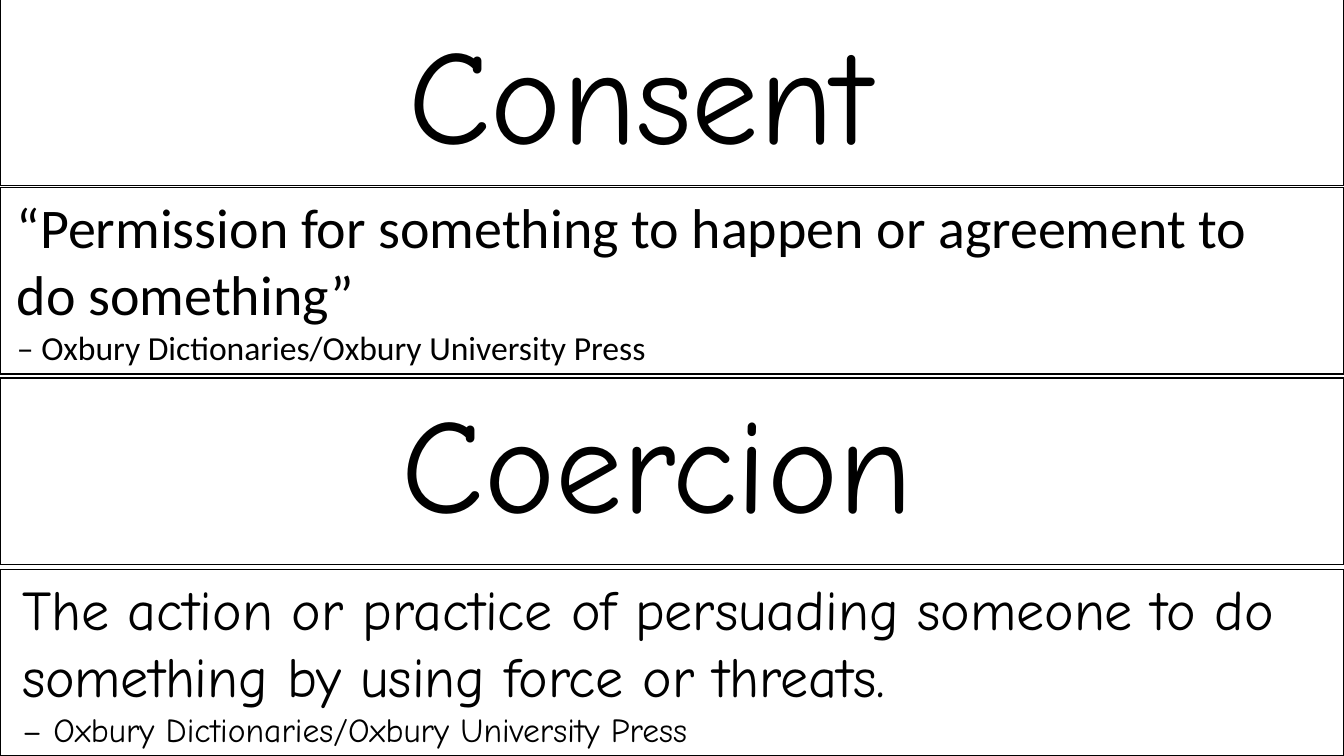
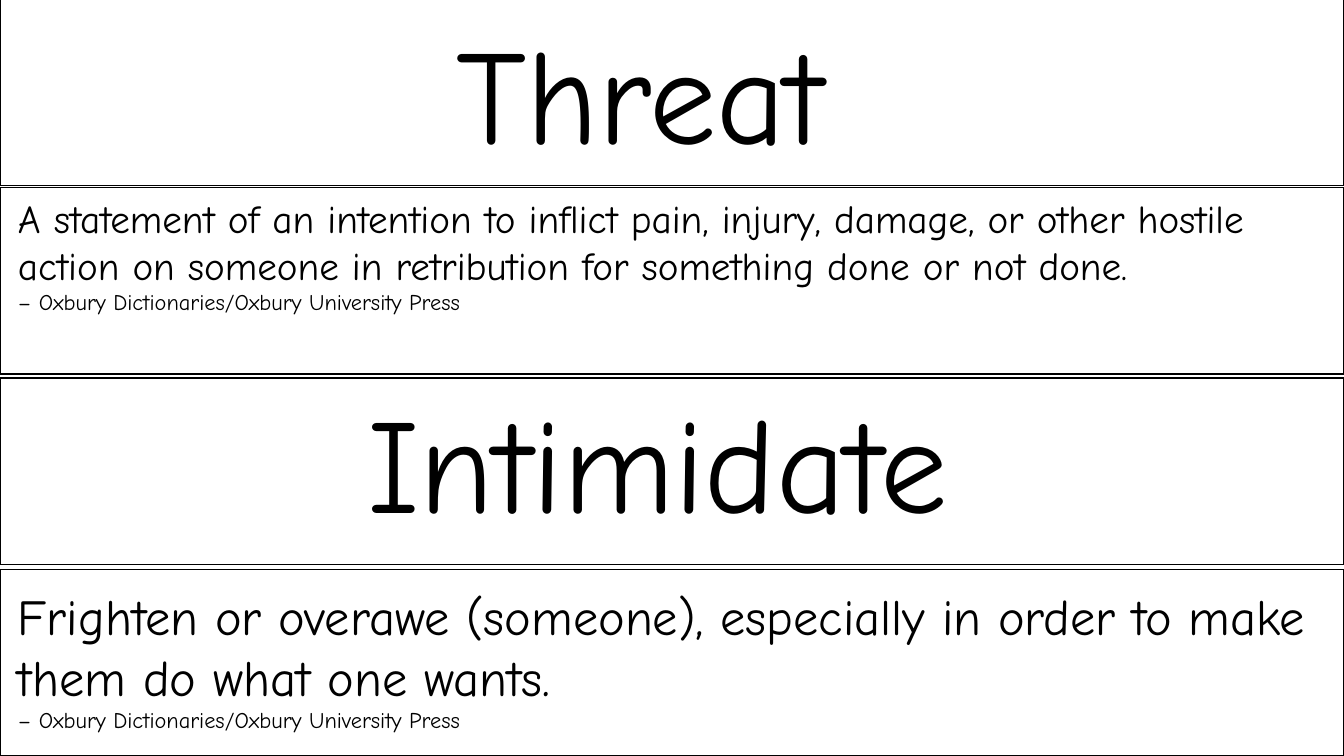
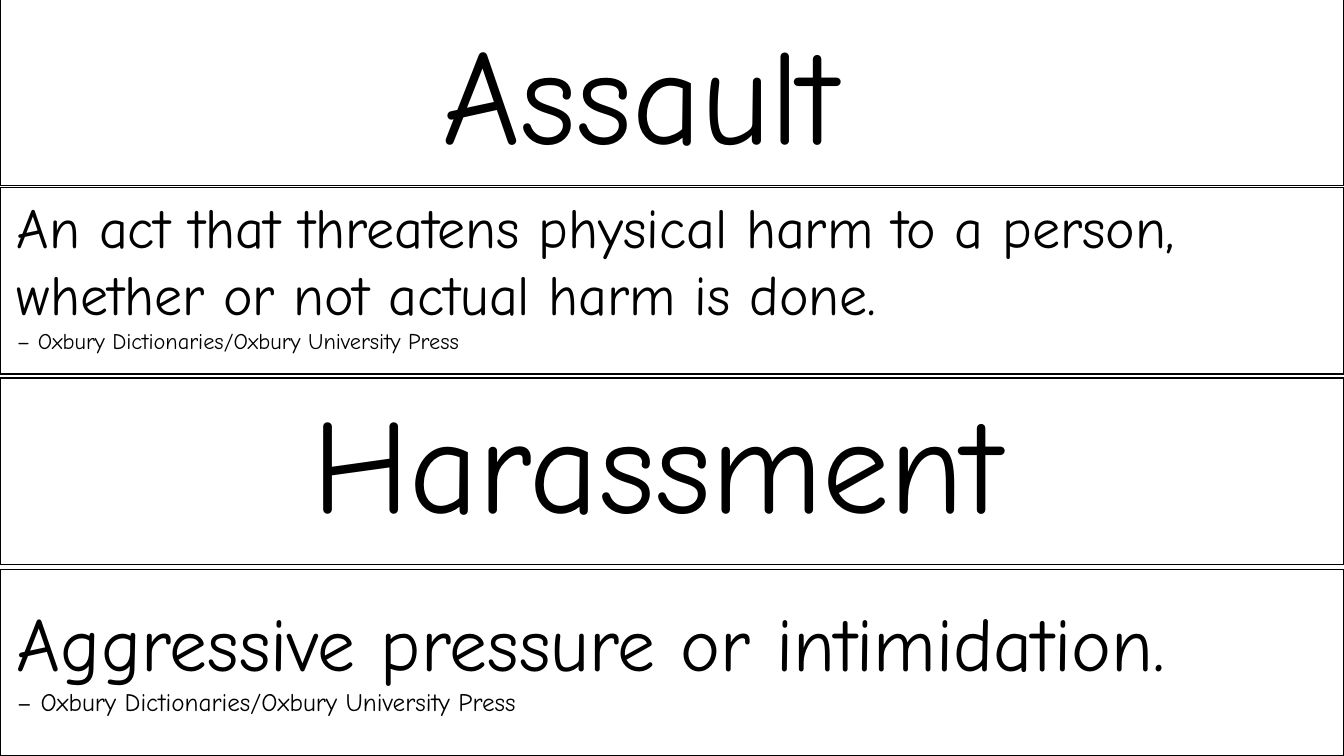
from pptx import Presentation
from pptx.dml.color import RGBColor
from pptx.enum.shapes import MSO_SHAPE
from pptx.enum.text import MSO_AUTO_SIZE, PP_ALIGN
from pptx.util import Pt

RECT = MSO_SHAPE.RECTANGLE
GROW = MSO_AUTO_SIZE.SHAPE_TO_FIT_TEXT
LEFT, CENTER = PP_ALIGN.LEFT, PP_ALIGN.CENTER

PX = 9144  # 100 px to the inch
WIDE, HIGH = 1333, 750
BLACK, WHITE = "000000", "FFFFFF"
HAND, PLAIN = "Comic Neue", "Calibri"

BANDS = [-1, 186, 375, 565]
BAND_H = 185
TITLES = [(0, 5), (17, 371)]
TITLE_W, TITLE_H, TITLE_SIZE = 1270, 172, 96
CREDIT = "– Oxbury Dictionaries/Oxbury University Press"

# Two terms a slide: term, meaning, (left, top, width), sizes, font
SLIDES = [
    [("Consent",
      "“Permission for something to happen or agreement to do something”",
      (7, 186, 1270), (40, 24), PLAIN),
     ("Coercion",
      "The action or practice of persuading someone to do something "
      "by using force or threats.",
      (12, 565, 1308), (40, 24), HAND)],
    [("Threat",
      "A statement of an intention to inflict pain, injury, damage, or other "
      "hostile action on someone in retribution for something done or not done.",
      (8, 188, 1325), (28, 16), HAND),
     ("Intimidate",
      "Frighten or overawe (someone), especially in order to make them "
      "do what one wants.",
      (8, 576, 1310), (36, 16), HAND)],
    [("Assault",
      "An act that threatens physical harm to a person, whether or not "
      "actual harm is done.",
      (7, 186, 1326), (40, 16), HAND),
     ("Harassment",
      "Aggressive pressure or intimidation.",
      (7, 586, 1308), (54, 18), HAND)],
]


def rgb(code):
    return RGBColor.from_string(code)


def area(*box):
    return [n * PX for n in box]


def band(slide, top):
    shape = slide.shapes.add_shape(RECT, *area(0, top, WIDE, BAND_H))
    shape.shadow.inherit = False
    shape.fill.solid()
    shape.fill.fore_color.rgb = rgb(WHITE)
    shape.line.color.rgb = rgb(BLACK)
    shape.line.width = Pt(1)


def text(slide, box, lines, sizes, font=HAND, align=LEFT):
    """Add a text box with one paragraph for each line and its size."""
    frame = slide.shapes.add_textbox(*area(*box)).text_frame
    frame.word_wrap = True
    frame.auto_size = GROW
    for i, (line, size) in enumerate(zip(lines, sizes)):
        para = frame.add_paragraph() if i else frame.paragraphs[0]
        para.alignment = align
        run = para.add_run()
        run.text = line
        run.font.name = font
        run.font.size = Pt(size)
        run.font.color.rgb = rgb(BLACK)


def main():
    deck = Presentation()
    deck.slide_width, deck.slide_height = area(WIDE, HIGH)
    for terms in SLIDES:
        slide = deck.slides.add_slide(deck.slide_layouts[6])
        for top in BANDS:
            band(slide, top)
        for spot, (term, meaning, (left, top, width), sizes, font) in zip(TITLES, terms):
            text(slide, (*spot, TITLE_W, TITLE_H), [term], [TITLE_SIZE], align=CENTER)
            height = min(BAND_H, HIGH - top)
            text(slide, (left, top, width, height), [meaning, CREDIT], sizes, font)
    deck.save("out.pptx")


if __name__ == "__main__":
    main()
